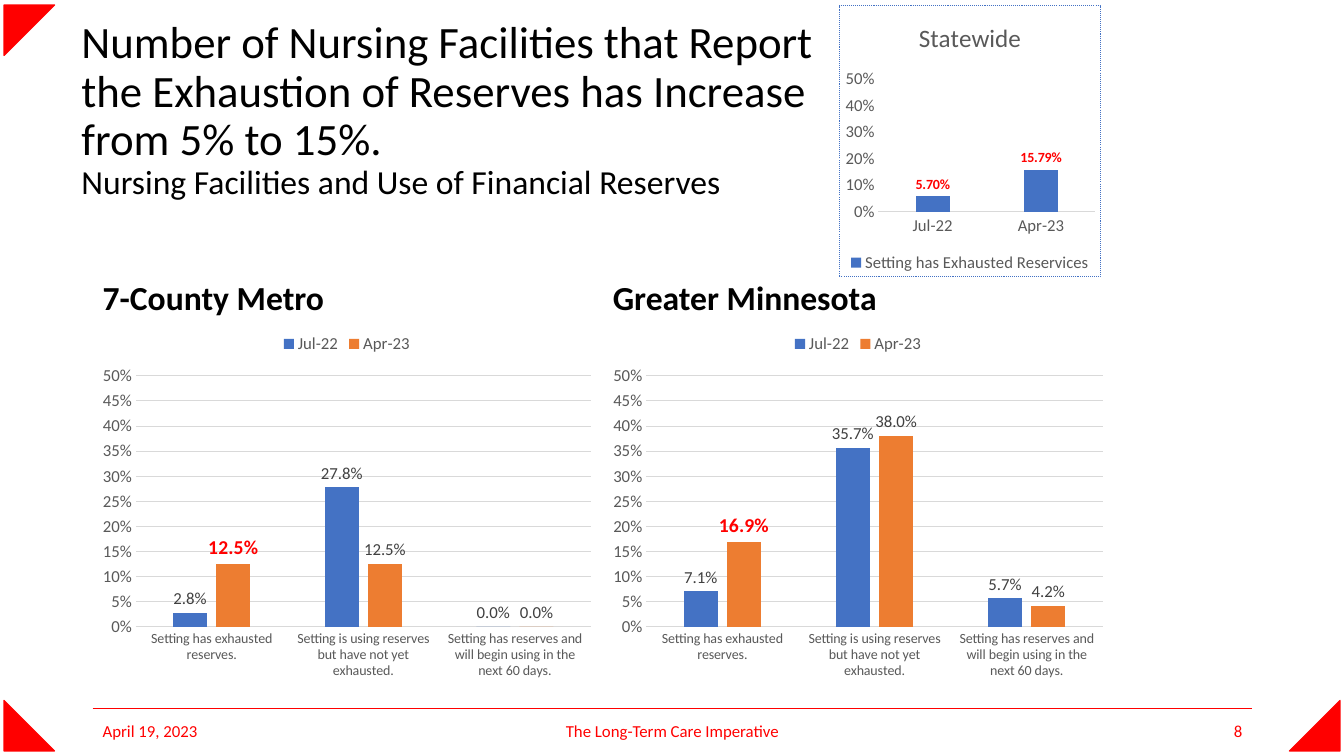
from dataclasses import dataclass

from lxml.etree import SubElement
from pptx import Presentation
from pptx.chart.data import CategoryChartData
from pptx.dml.color import RGBColor
from pptx.enum.chart import XL_CHART_TYPE, XL_LABEL_POSITION, XL_LEGEND_POSITION, XL_TICK_MARK
from pptx.enum.shapes import MSO_CONNECTOR, MSO_SHAPE
from pptx.enum.text import MSO_ANCHOR, PP_ALIGN
from pptx.oxml import parse_xml
from pptx.oxml.ns import nsdecls, qn
from pptx.util import Inches, Pt


@dataclass(frozen=True)
class Theme:
    font: str = "Calibri"
    accent: str = "FF0000"
    text: str = "000000"
    label: str = "404040"
    muted: str = "595959"
    grid: str = "D9D9D9"
    july: str = "4472C4"
    april: str = "ED7D31"
    title_size: int = 32
    heading_size: int = 24
    chart_title_size: int = 18
    highlight_size: int = 14
    body_size: int = 12
    small_size: int = 10


THEME = Theme()
RESERVE_STATES = [
    "Setting has exhausted reserves.",
    "Setting is using reserves but have not yet exhausted.",
    "Setting has reserves and will begin using in the next 60 days.",
]
REGIONS = [
    ("7-County Metro", 0.92, 5.04, (0.028, 0.278, 0), (0.125, 0.125, 0)),
    ("Greater Minnesota", 5.98, 5.06, (0.071, 0.357, 0.057), (0.169, 0.38, 0.042)),
]
CORNERS = [(0.04, 0.05, 90), (12.79, 6.95, 270), (0.04, 6.95, 0)]
FOOTERS = [
    ("April 19, 2023", 0.92, 3, PP_ALIGN.LEFT),
    ("The Long-Term Care Imperative", 4.42, 4.5, PP_ALIGN.CENTER),
    ("8", 9.42, 3, PP_ALIGN.RIGHT),
]


def style_font(font, size, color, bold=False):
    font.name = THEME.font
    font.size = Pt(size)
    font.bold = bold
    font.color.rgb = RGBColor.from_string(color)


def add_corner(slide, left, top, rotation):
    shape = slide.shapes.add_shape(
        MSO_SHAPE.RIGHT_TRIANGLE, Inches(left), Inches(top), Inches(0.5), Inches(0.5))
    shape.rotation = rotation
    shape.shadow.inherit = False
    shape.fill.solid()
    shape.fill.fore_color.rgb = RGBColor.from_string(THEME.accent)
    shape.line.color.rgb = RGBColor.from_string(THEME.accent)
    shape.line.width = Pt(1)


def add_footer_rule(slide):
    rule = slide.shapes.add_connector(
        MSO_CONNECTOR.STRAIGHT, Inches(0.92), Inches(7.03), Inches(12.42), Inches(7.03))
    rule.line.color.rgb = RGBColor.from_string(THEME.accent)
    rule.line.width = Pt(0.5)
    SubElement(rule.element.spPr, qn("a:effectLst"))


def add_text(slide, text, box, sizes, color, anchor=MSO_ANCHOR.MIDDLE,
             align=PP_ALIGN.LEFT, bold=False, line_spacing=None):
    text_box = slide.shapes.add_textbox(*(Inches(length) for length in box))
    text_frame = text_box.text_frame
    text_frame.word_wrap = True
    text_frame.vertical_anchor = anchor
    text_frame.text = text
    paragraph = text_frame.paragraphs[0]
    paragraph.alignment = align
    paragraph.line_spacing = line_spacing
    for run, size in zip(paragraph.runs, sizes):
        style_font(run.font, size, color, bold)


def set_plot_layout(chart, x, y, width, height):
    plot_area = chart.element.find(qn("c:chart")).find(qn("c:plotArea"))
    existing = plot_area.find(qn("c:layout"))
    if existing is not None:
        plot_area.remove(existing)
    plot_area.insert(0, parse_xml(
        f'<c:layout {nsdecls("c")}><c:manualLayout><c:layoutTarget val="inner"/>'
        f'<c:xMode val="edge"/><c:yMode val="edge"/><c:x val="{x}"/><c:y val="{y}"/>'
        f'<c:w val="{width}"/><c:h val="{height}"/></c:manualLayout></c:layout>'))


def style_axes(chart, category_size, major_unit, gridlines):
    for axis, size in ((chart.category_axis, category_size),
                       (chart.value_axis, THEME.body_size)):
        axis.major_tick_mark = XL_TICK_MARK.NONE
        axis.minor_tick_mark = XL_TICK_MARK.NONE
        style_font(axis.tick_labels.font, size, THEME.muted)
    category_line = chart.category_axis.format.line
    category_line.color.rgb = RGBColor.from_string(THEME.grid)
    category_line.width = Pt(0.75)
    value_axis = chart.value_axis
    value_axis.minimum_scale = 0
    value_axis.maximum_scale = 0.5
    value_axis.major_unit = major_unit
    value_axis.tick_labels.number_format = "0%"
    value_axis.tick_labels.number_format_is_linked = False
    value_axis.format.line.fill.background()
    value_axis.has_major_gridlines = gridlines
    if gridlines:
        grid_line = value_axis.major_gridlines.format.line
        grid_line.color.rgb = RGBColor.from_string(THEME.grid)
        grid_line.width = Pt(0.75)


def add_column_chart(slide, box, categories, series_values, number_format, label_style,
                     legend_position, category_size, major_unit, gridlines):
    chart_data = CategoryChartData(number_format=number_format)
    chart_data.categories = categories
    for name, values in series_values:
        chart_data.add_series(name, values)
    chart = slide.shapes.add_chart(
        XL_CHART_TYPE.COLUMN_CLUSTERED, *(Inches(length) for length in box), chart_data).chart
    style_font(chart.font, THEME.small_size, THEME.text)
    chart.has_title = False
    chart.has_legend = True
    chart.legend.position = legend_position
    chart.legend.include_in_layout = False
    style_font(chart.legend.font, THEME.body_size, THEME.muted)
    style_axes(chart, category_size, major_unit, gridlines)
    plot = chart.plots[0]
    plot.vary_by_categories = False
    plot.gap_width = 219
    plot.overlap = -27
    for series, color in zip(plot.series, (THEME.july, THEME.april)):
        series.format.fill.solid()
        series.format.fill.fore_color.rgb = RGBColor.from_string(color)
        labels = series.data_labels
        labels.show_value = True
        labels.number_format = number_format
        labels.number_format_is_linked = False
        labels.position = XL_LABEL_POSITION.OUTSIDE_END
        style_font(labels.font, *label_style)
    return chart


def add_region(slide, name, left, width, july_values, april_values):
    add_text(slide, name, (left, 2.3, 5.06, 0.9), [THEME.heading_size], THEME.text,
             anchor=MSO_ANCHOR.BOTTOM, bold=True, line_spacing=0.9)
    chart = add_column_chart(
        slide, (left, 3.2, width, 3.6), RESERVE_STATES,
        [("Jul-22", july_values), ("Apr-23", april_values)], "0.0%",
        (THEME.body_size, THEME.label), XL_LEGEND_POSITION.TOP,
        THEME.small_size, 0.05, True)
    set_plot_layout(chart, 0.085, 0.147, 0.895, 0.692)
    highlight = chart.plots[0].series[1].points[0].data_label
    style_font(highlight.font, THEME.highlight_size, THEME.accent, True)
    highlight.position = XL_LABEL_POSITION.OUTSIDE_END


def add_statewide(slide):
    chart = add_column_chart(
        slide, (8.32, 0.05, 2.6, 2.7), ["Jul-22", "Apr-23"],
        [("Setting has Exhausted Reservices", (0.057, 0.1579))], "0.00%",
        (THEME.small_size, THEME.accent, True), XL_LEGEND_POSITION.BOTTOM,
        THEME.body_size, 0.1, False)
    chart.has_title = True
    title_frame = chart.chart_title.text_frame
    title_frame.text = "Statewide"
    style_font(title_frame.paragraphs[0].runs[0].font, THEME.chart_title_size, THEME.muted)
    chart.chart_title.include_in_layout = False
    set_plot_layout(chart, 0.15, 0.27, 0.83, 0.49)
    chart.element.find(qn("c:txPr")).addprevious(parse_xml(
        f'<c:spPr {nsdecls("c", "a")}><a:noFill/><a:ln w="{Pt(0.75)}"><a:solidFill>'
        f'<a:srgbClr val="{THEME.july}"/></a:solidFill><a:prstDash val="sysDot"/>'
        f'</a:ln></c:spPr>'))


def main():
    presentation = Presentation()
    presentation.slide_width = Inches(13.33)
    presentation.slide_height = Inches(7.5)
    slide = presentation.slides.add_slide(presentation.slide_layouts[6])
    for corner in CORNERS:
        add_corner(slide, *corner)
    add_footer_rule(slide)
    add_text(slide,
             "Number of Nursing Facilities that Report the Exhaustion of Reserves has "
             "Increase from 5% to 15%.\vNursing Facilities and Use of Financial Reserves",
             (0.71, 0.06, 7.55, 2.08), [THEME.title_size, THEME.heading_size], THEME.text,
             line_spacing=0.9)
    for region in REGIONS:
        add_region(slide, *region)
    for text, left, width, align in FOOTERS:
        add_text(slide, text, (left, 7.05, width, 0.4), [THEME.body_size], THEME.accent,
                 align=align)
    add_statewide(slide)
    presentation.save("out.pptx")


if __name__ == "__main__":
    main()
